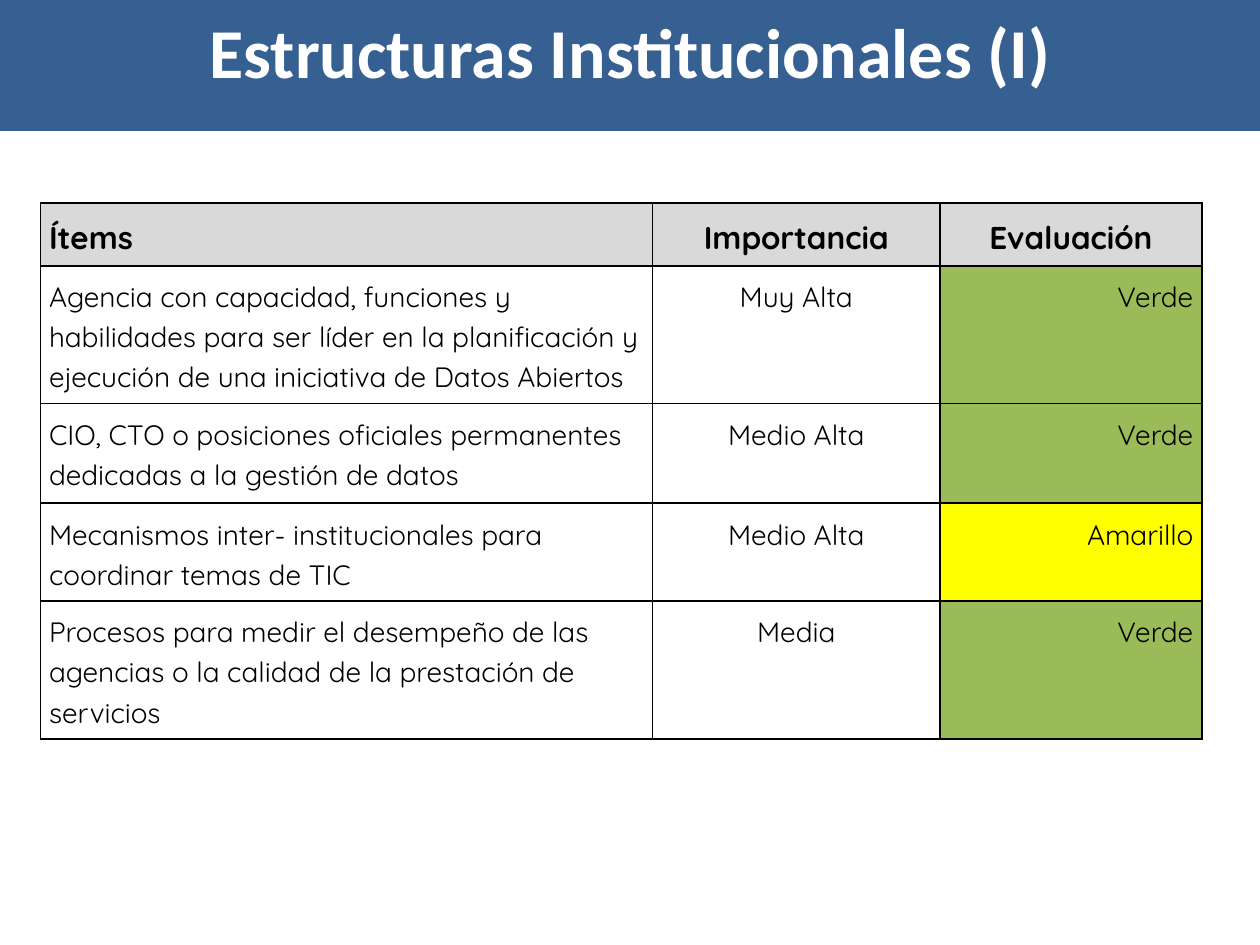
from pptx import Presentation
from pptx.dml.color import RGBColor
from pptx.enum.shapes import MSO_SHAPE
from pptx.enum.text import MSO_ANCHOR, PP_ALIGN
from pptx.oxml import parse_xml
from pptx.oxml.ns import nsdecls
from pptx.util import Inches, Pt

RECT = MSO_SHAPE.RECTANGLE
TOP = MSO_ANCHOR.TOP
LEFT, MID, RIGHT = PP_ALIGN.LEFT, PP_ALIGN.CENTER, PP_ALIGN.RIGHT

COLORS = {
    "band": "376092",
    "white": "FFFFFF",
    "black": "000000",
    "head": "D9D9D9",
    "Verde": "9BBB59",
    "Amarillo": "FFFF00",
}
WIDTHS = [4.86, 2.28, 2.08]
HEIGHTS = [0.34, 1.05, 0.79, 0.52, 0.79]
ROWS = [
    ("Ítems", "Importancia", "Evaluación"),
    ("Agencia con capacidad, funciones y habilidades para ser líder en la "
     "planificación y ejecución de una iniciativa de Datos Abiertos",
     "Muy Alta", "Verde"),
    ("CIO, CTO o posiciones oficiales permanentes dedicadas a la gestión "
     "de datos", "Medio Alta", "Verde"),
    ("Mecanismos inter- institucionales para coordinar temas de TIC",
     "Medio Alta", "Amarillo"),
    ("Procesos para medir el desempeño de las agencias o la calidad de la "
     "prestación de servicios", "Media", "Verde"),
]


class Deck:
    head_font = "Calibri"
    body_font = "Quicksand"
    inset = Inches(0.07)

    def __init__(self, slide):
        self.slide = slide

    def paint(self, fill, name):
        fill.solid()
        fill.fore_color.rgb = RGBColor.from_string(COLORS[name])

    def add_text(self, para, text, size, font, color, bold, align):
        para.alignment = align
        run = para.add_run()
        run.text = text
        run.font.size = Pt(size)
        run.font.name = font
        run.font.bold = bold
        run.font.color.rgb = RGBColor.from_string(COLORS[color])

    def banner(self, text, width, height):
        band = self.slide.shapes.add_shape(
            RECT, 0, 0, Inches(width), Inches(height))
        band.shadow.inherit = False
        self.paint(band.fill, "band")
        band.line.fill.background()
        frame = band.text_frame
        frame.word_wrap = True
        frame.vertical_anchor = TOP
        frame.margin_top = self.inset
        self.add_text(frame.paragraphs[0], text, 40, self.head_font,
                      "white", True, MID)

    def border(self, cell):
        """Draw a thin line on all four sides, ahead of the cell fill."""
        props = cell._tc.get_or_add_tcPr()
        for spot, side in enumerate(("lnL", "lnR", "lnT", "lnB")):
            props.insert(spot, parse_xml(
                f'<a:{side} {nsdecls("a")} w="{Pt(1)}"><a:solidFill>'
                f'<a:srgbClr val="{COLORS["black"]}"/>'
                f'</a:solidFill></a:{side}>'))

    def cell(self, cell, text, head, align, fill):
        cell.margin_left = cell.margin_right = self.inset
        cell.margin_top = cell.margin_bottom = self.inset
        cell.vertical_anchor = TOP
        if fill:
            self.paint(cell.fill, fill)
        else:
            cell.fill.background()
        self.border(cell)
        para = cell.text_frame.paragraphs[0]
        para.line_spacing = 1.15
        if head:
            para.space_after = Pt(10)
        self.add_text(para, text, 18 if head else 16, self.body_font,
                      "black", head, align)

    def table(self, rows, left, top, height):
        frame = self.slide.shapes.add_table(
            len(rows), len(WIDTHS), Inches(left), Inches(top),
            Inches(sum(WIDTHS)), Inches(height))
        table = frame.table
        for col, width in zip(table.columns, WIDTHS):
            col.width = Inches(width)
        for row, tall in zip(table.rows, HEIGHTS):
            row.height = Inches(tall)
        frame.height = Inches(height)
        for r, texts in enumerate(rows):
            head = r == 0
            aligns = (LEFT, MID, MID if head else RIGHT)
            for c, text in enumerate(texts):
                fill = "head" if head else text if text in COLORS else None
                self.cell(table.cell(r, c), text, head, aligns[c], fill)


def main():
    prs = Presentation()
    prs.slide_width, prs.slide_height = Inches(10), Inches(7.5)
    deck = Deck(prs.slides.add_slide(prs.slide_layouts[6]))
    deck.table(ROWS, 0.32, 1.61, 4.72)
    deck.banner("Estructuras Institucionales (I)", 10, 1.04)
    prs.save("out.pptx")


if __name__ == "__main__":
    main()
